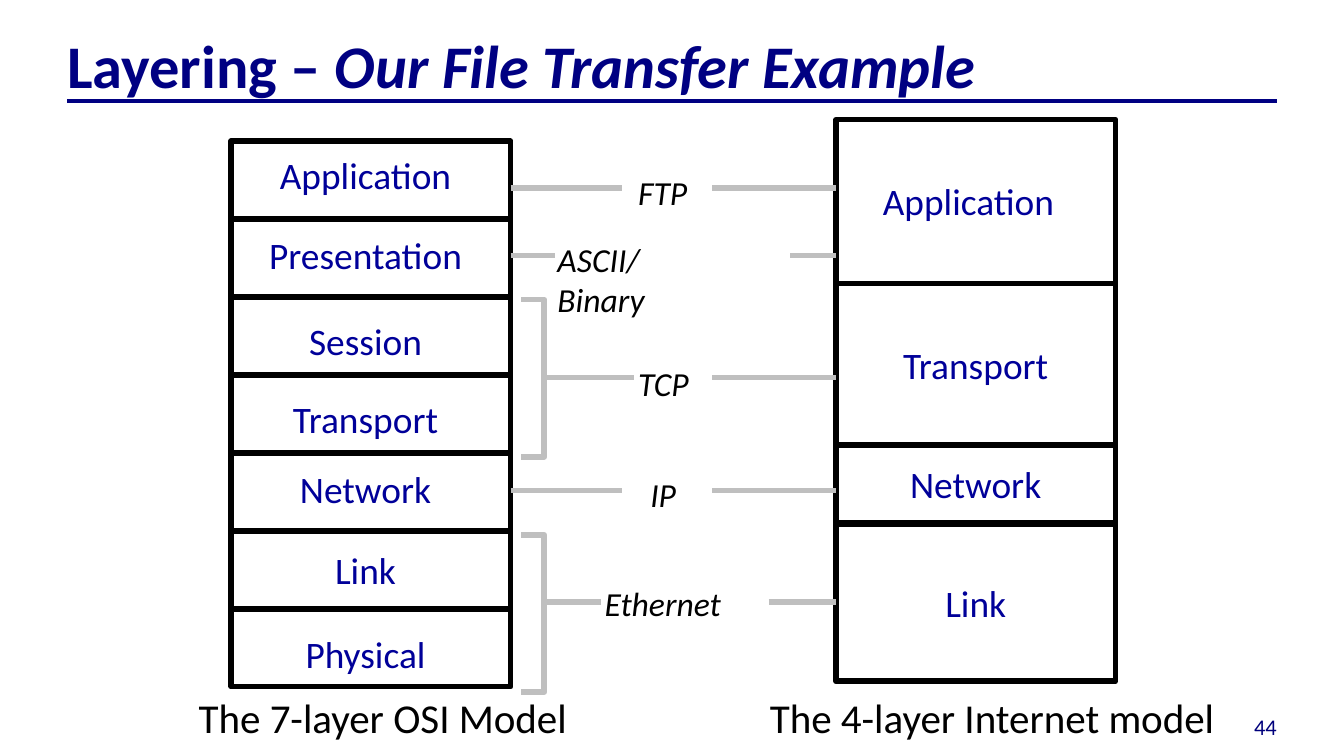
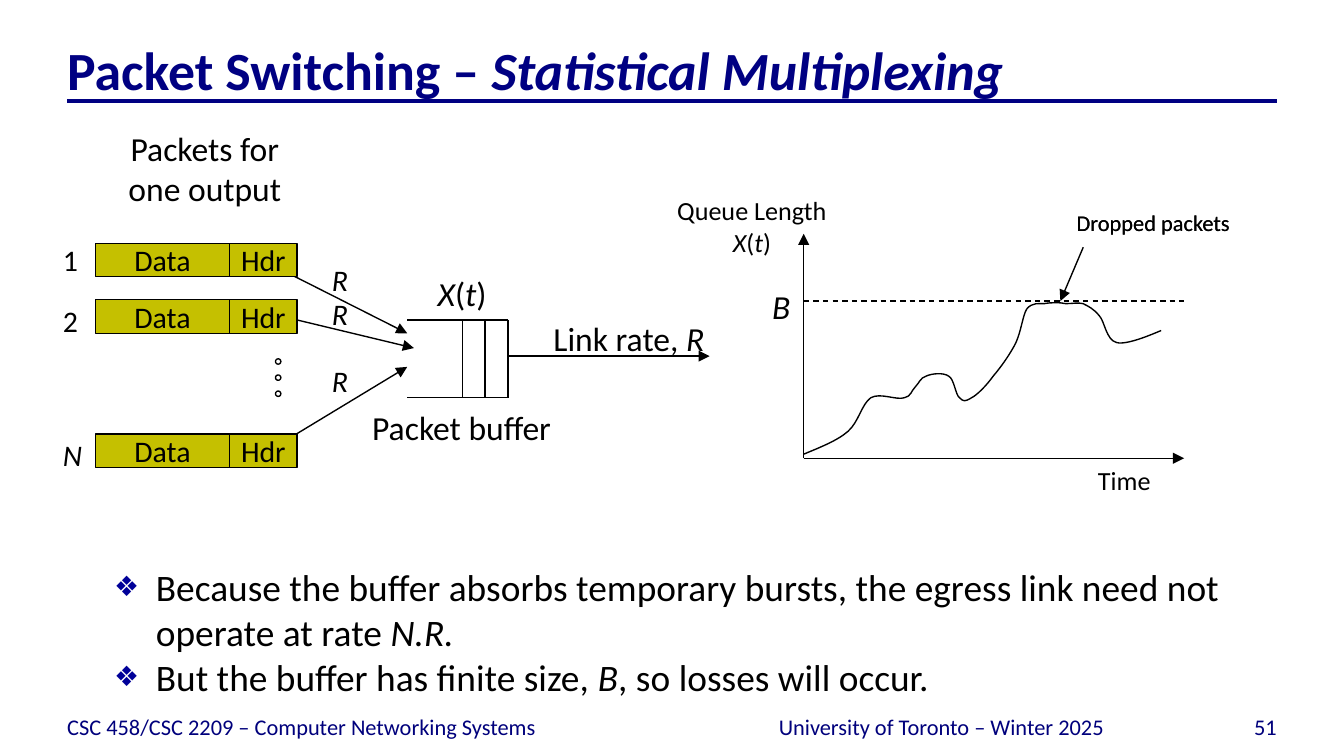
from dataclasses import dataclass
from typing import NamedTuple

from lxml.etree import SubElement
from pptx import Presentation
from pptx.dml.color import RGBColor
from pptx.enum.dml import MSO_LINE
from pptx.enum.shapes import MSO_CONNECTOR, MSO_SHAPE
from pptx.enum.text import MSO_ANCHOR as Anchor, MSO_AUTO_SIZE as AutoSize, PP_ALIGN as Align
from pptx.oxml.ns import qn
from pptx.shapes.autoshape import Shape
from pptx.slide import Slide
from pptx.text.text import TextFrame
from pptx.util import Inches, Pt


@dataclass(frozen=True)
class Theme:
    font: str = "Calibri"
    title: str = "000082"
    footer: str = "00007C"
    layer: str = "000099"
    ink: str = "000000"
    paper: str = "FFFFFF"
    link: str = "BFBFBF"
    packet: str = "C5C000"
    caption_size: float = 22
    layer_size: float = 20
    text_size: float = 18
    packet_size: float = 16
    axis_size: float = 14
    small_size: float = 12
    thick: float = 3
    rule: float = 2.25
    thin: float = 0.75


T = Theme()
Point = tuple[float, float]


class Box(NamedTuple):
    x: float
    y: float
    w: float
    h: float

    def emu(self) -> list[int]:
        return [Inches(v) for v in self]


class Layer(NamedTuple):
    name: str
    label_y: float
    label_w: float


class Protocol(NamedTuple):
    name: str
    y: float
    left: Point
    right_start: float
    label: Box
    wrap: bool = False
    right_inset: float = 0.1


class Packet(NamedTuple):
    label: str
    y: float
    label_y: float
    rate_y: float
    start: Point
    end: Point


OSI = [
    Layer("Application", 1.08, 1.48), Layer("Presentation", 1.68, 1.65),
    Layer("Session", 2.32, 1.04), Layer("Transport", 2.9, 1.31),
    Layer("Network", 3.42, 1.18), Layer("Link", 4.02, 0.67),
    Layer("Physical", 4.65, 1.11),
]
INTERNET = [("", 0.89, 1.22), ("Transport", 2.11, 1.2), ("Network", 3.31, 0.58), ("Link", 3.9, 1.17)]
PROTOCOLS = [
    Protocol("FTP", 1.4, (3.8, 4.63), 5.3, Box(4.65, 1.23, 0.57, 0.4)),
    Protocol("ASCII/Binary", 1.9, (3.8, 4.13), 5.88, Box(4.05, 1.73, 1.46, 0.4), True, 0.45),
    Protocol("TCP", 2.81, (4.05, 4.72), 5.3, Box(4.65, 2.65, 0.58, 0.4)),
    Protocol("IP", 3.65, (3.8, 4.63), 5.3, Box(4.74, 3.48, 0.39, 0.4)),
    Protocol("Ethernet", 4.48, (4.05, 4.47), 5.72, Box(4.4, 4.29, 1.32, 0.4), True),
]
PACKETS = [
    Packet("1", 1.81, 1.75, 1.9, (2.04, 1.98), (3.03, 2.48)),
    Packet("2", 2.23, 2.2, 2.15, (2.04, 2.34), (3.08, 2.59)),
    Packet("*N*", 3.23, 3.2, 2.65, (1.99, 3.36), (3.03, 2.73)),
]
QUEUE_CURVE = [
    (5.98, 3.38), (6.1, 3.33), (6.23, 3.28), (6.31, 3.21), (6.39, 3.14), (6.41, 3.01), (6.48, 2.96),
    (6.55, 2.92), (6.67, 2.98), (6.73, 2.96), (6.78, 2.95), (6.78, 2.91), (6.81, 2.88),
    (6.84, 2.85), (6.85, 2.81), (6.89, 2.8), (6.93, 2.78), (7.02, 2.77), (7.06, 2.8),
    (7.1, 2.82), (7.11, 2.94), (7.14, 2.96), (7.17, 2.99), (7.18, 2.99), (7.23, 2.96),
    (7.27, 2.94), (7.34, 2.87), (7.39, 2.8), (7.45, 2.73), (7.52, 2.63), (7.56, 2.55),
    (7.6, 2.46), (7.61, 2.35), (7.64, 2.3), (7.68, 2.25), (7.73, 2.26), (7.77, 2.26),
    (7.82, 2.25), (7.89, 2.25), (7.93, 2.26), (7.98, 2.26), (8.02, 2.25), (8.06, 2.26),
    (8.1, 2.28), (8.14, 2.3), (8.18, 2.35), (8.22, 2.39), (8.23, 2.53), (8.31, 2.55),
    (8.39, 2.57), (8.59, 2.48), (8.64, 2.46),
]


def rgb(color: str) -> RGBColor:
    return RGBColor.from_string(color)


def write(tf: TextFrame, text: str, *, size: float, color: str = T.ink,
          align: Align = Align.LEFT, bold: bool = False) -> None:
    for i, line in enumerate(text.split("\n")):
        p = tf.paragraphs[0] if i == 0 else tf.add_paragraph()
        p.alignment = align
        p.space_before = Pt(0)
        for j, part in enumerate(line.split("*")):
            if part:
                r = p.add_run()
                r.text = part
                r.font.name = T.font
                r.font.size = Pt(size)
                r.font.color.rgb = rgb(color)
                r.font.bold = bold
                r.font.italic = j % 2 == 1


def set_insets(tf: TextFrame, left: float, top: float, right: float, bottom: float) -> None:
    tf.margin_left, tf.margin_top = Inches(left), Inches(top)
    tf.margin_right, tf.margin_bottom = Inches(right), Inches(bottom)


def add_text(s: Slide, box: Box, text: str, *, size: float = T.text_size, color: str = T.ink,
             align: Align = Align.LEFT, wrap: bool = False, right_inset: float = 0.1) -> None:
    tf = s.shapes.add_textbox(*box.emu()).text_frame
    tf.word_wrap = wrap
    tf.auto_size = AutoSize.SHAPE_TO_FIT_TEXT
    tf.margin_right = Inches(right_inset)
    write(tf, text, size=size, color=color, align=align)


def add_footer(s: Slide, box: Box, text: str, align: Align) -> None:
    tf = s.shapes.add_textbox(*box.emu()).text_frame
    tf.word_wrap = True
    tf.vertical_anchor = Anchor.BOTTOM
    set_insets(tf, 0, 0, 0, 0)
    write(tf, text, size=T.small_size, color=T.footer, align=align)


def add_block(s: Slide, box: Box, *, text: str = "", kind: MSO_SHAPE = MSO_SHAPE.RECTANGLE,
              fill: str | None = T.paper, width: float = T.thick,
              size: float = T.layer_size, color: str = T.layer) -> None:
    sp = s.shapes.add_shape(kind, *box.emu())
    sp.shadow.inherit = False
    if fill:
        sp.fill.solid()
        sp.fill.fore_color.rgb = rgb(fill)
    else:
        sp.fill.background()
    sp.line.color.rgb = rgb(T.ink)
    sp.line.width = Pt(width)
    if text:
        sp.text_frame.word_wrap = False
        sp.text_frame.vertical_anchor = Anchor.MIDDLE
        write(sp.text_frame, text, size=size, color=color, align=Align.CENTER)


def add_line(s: Slide, start: Point, end: Point, *, color: str = T.ink, width: float = T.thin,
             dash: bool = False, arrow: bool = False) -> None:
    c = s.shapes.add_connector(MSO_CONNECTOR.STRAIGHT, *[Inches(v) for v in (*start, *end)])
    c.line.color.rgb = rgb(color)
    c.line.width = Pt(width)
    if dash:
        c.line.dash_style = MSO_LINE.DASH
    if arrow:
        SubElement(c.line._get_or_add_ln(), qn("a:tailEnd"), type="triangle")
    SubElement(c._element.spPr, qn("a:effectLst"))


def add_outline(s: Slide, points: list[Point], *, color: str, width: float) -> Shape:
    emu = [(Inches(x), Inches(y)) for x, y in points]
    builder = s.shapes.build_freeform(*emu[0])
    builder.add_line_segments(emu[1:], close=False)
    sp = builder.convert_to_shape()
    sp.shadow.inherit = False
    sp.fill.background()
    sp.line.color.rgb = rgb(color)
    sp.line.width = Pt(width)
    return sp


def add_curve(s: Slide, points: list[Point]) -> None:
    sp = add_outline(s, points, color=T.ink, width=T.thin)
    outline = next(sp._element.iter(qn("a:path")))
    segments = outline.findall(qn("a:lnTo"))
    for i in range(0, len(segments), 3):
        bezier = SubElement(outline, qn("a:cubicBezTo"))
        for segment in segments[i:i + 3]:
            bezier.append(segment[0])
            outline.remove(segment)


def add_frame(s: Slide, title: str, size: float, number: str) -> None:
    add_line(s, (0.5, 0.75), (9.5, 0.75), color=T.title, width=T.rule)
    add_footer(s, Box(8.67, 5.21, 0.83, 0.3), number, Align.RIGHT)
    sp = s.shapes.title
    sp.left, sp.top, sp.width, sp.height = Box(0.5, 0.25, 9, 0.5).emu()
    tf = sp.text_frame
    tf.auto_size = AutoSize.NONE
    tf.vertical_anchor = Anchor.BOTTOM
    set_insets(tf, 0, 0.05, 0, 0)
    write(tf, title, size=size, color=T.title, bold=True)


def add_bullets(s: Slide, box: Box, text: str) -> None:
    sp = s.placeholders[1]
    sp.left, sp.top, sp.width, sp.height = box.emu()
    sp.text_frame.auto_size = AutoSize.NONE
    write(sp.text_frame, text, size=T.layer_size)
    for p in sp.text_frame.paragraphs:
        pPr = p._p.get_or_add_pPr()
        pPr.set("marL", str(Inches(0.31)))
        pPr.set("indent", str(-Inches(0.31)))
        SubElement(SubElement(pPr, qn("a:buClr")), qn("a:srgbClr"), val=T.layer)
        SubElement(pPr, qn("a:buSzPct"), val="75000")
        SubElement(pPr, qn("a:buChar"), char="❖")


def build_layering(s: Slide) -> None:
    add_frame(s, "Layering – *Our File Transfer Example*", 32.4, "44")
    for i, layer in enumerate(OSI):
        add_block(s, Box(1.72, 1.05 + 0.58 * i, 2.08, 0.58))
    for layer in OSI:
        add_text(s, Box(2.72 - layer.label_w / 2, layer.label_y, layer.label_w, 0.43), layer.name,
                 size=T.layer_size, color=T.layer, align=Align.CENTER)
    for name, y, h in INTERNET:
        add_block(s, Box(6.22, y, 2.08, h), text=name)
    add_text(s, Box(6.47, 1.28, 1.48, 0.43), "Application", size=T.layer_size, color=T.layer)
    for x, w, caption in [(1.38, 2.96, "The 7-layer OSI Model"), (5.63, 3.53, "The 4-layer Internet model")]:
        add_text(s, Box(x, 5.1, w, 0.47), caption, size=T.caption_size)
    for y in (2.23, 3.98):
        add_outline(s, [(3.88, y), (4.05, y), (4.05, y + 1.17), (3.88, y + 1.17)],
                    color=T.link, width=T.thick)
    for pr in PROTOCOLS:
        add_text(s, pr.label, f"*{pr.name}*", wrap=pr.wrap, right_inset=pr.right_inset)
        for x1, x2 in (pr.left, (pr.right_start, 6.22)):
            add_line(s, (x1, pr.y), (x2, pr.y), color=T.link, width=T.thick)


def build_multiplexing(s: Slide) -> None:
    add_frame(s, "Packet Switching – *Statistical Multiplexing*", 28.8, "51")
    for y in (2.38, 2.96):
        add_line(s, (3.03, y), (3.78, y))
    for x in (3.44, 3.61, 3.78):
        add_line(s, (x, 2.38), (x, 2.96))
    add_line(s, (3.78, 2.65), (5.28, 2.65), arrow=True)
    for i in range(3):
        add_block(s, Box(2.05, 2.67 + 0.12 * i, 0.04, 0.04), kind=MSO_SHAPE.OVAL, fill=None, width=T.thin)
    for pk in PACKETS:
        add_line(s, pk.start, pk.end, arrow=True)
        for x, w, name in ((0.71, 1, "Data"), (1.71, 0.5, "Hdr")):
            add_block(s, Box(x, pk.y, w, 0.25), text=name, fill=T.packet, width=T.thin,
                      size=T.packet_size, color=T.ink)
        add_text(s, Box(0.37, pk.label_y, 0.32, 0.37), pk.label, size=T.packet_size)
        add_text(s, Box(2.37, pk.rate_y, 0.32, 0.37), "*R*", size=T.packet_size)

    origin = (5.98, 3.41)
    add_line(s, origin, (5.98, 1.74), arrow=True)
    add_line(s, origin, (8.81, 3.41), arrow=True)
    add_line(s, (5.98, 2.24), (8.81, 2.24), dash=True)
    add_curve(s, QUEUE_CURVE)
    add_line(s, (8.06, 1.84), (7.89, 2.24), arrow=True)

    add_text(s, Box(4, 2.32, 1.34, 0.4), "Link rate, *R*", align=Align.RIGHT)
    add_text(s, Box(3.15, 1.98, 0.57, 0.4), "*X*(*t*)", align=Align.RIGHT)
    add_text(s, Box(5.64, 2.08, 0.34, 0.4), "*B*", align=Align.RIGHT)
    for w in (2.02, 1.63):
        add_text(s, Box(9.25 - w, 1.51, w, 0.3), "Dropped packets", size=T.small_size,
                 align=Align.RIGHT, wrap=True)
    add_text(s, Box(4.78, 1.4, 1.63, 0.57), "Queue Length\n*X*(*t*)", size=T.axis_size,
             align=Align.CENTER, wrap=True)
    add_text(s, Box(7.78, 3.41, 0.88, 0.33), "Time", size=T.axis_size, align=Align.RIGHT, wrap=True)
    add_text(s, Box(2.62, 2.98, 1.63, 0.4), "Packet buffer", align=Align.CENTER, wrap=True)
    add_text(s, Box(0.71, 0.9, 1.63, 0.7), "Packets for one output", align=Align.CENTER, wrap=True)
    add_bullets(s, Box(0.75, 4.15, 8.75, 1.1),
                "Because the buffer absorbs temporary bursts, the egress link need not operate at rate *N.R.*\n"
                "But the buffer has finite size, *B*, so losses will occur.")
    add_footer(s, Box(0.5, 5.21, 4.83, 0.3), "CSC 458/CSC 2209 – Computer Networking Systems", Align.LEFT)
    add_footer(s, Box(5.42, 5.21, 3.17, 0.3), "University of Toronto – Winter 2025", Align.CENTER)


def main() -> None:
    prs = Presentation()
    prs.slide_width = Inches(10)
    prs.slide_height = Inches(10 * 9 / 16)
    build_layering(prs.slides.add_slide(prs.slide_layouts[5]))
    build_multiplexing(prs.slides.add_slide(prs.slide_layouts[1]))
    prs.save("out.pptx")


if __name__ == "__main__":
    main()
